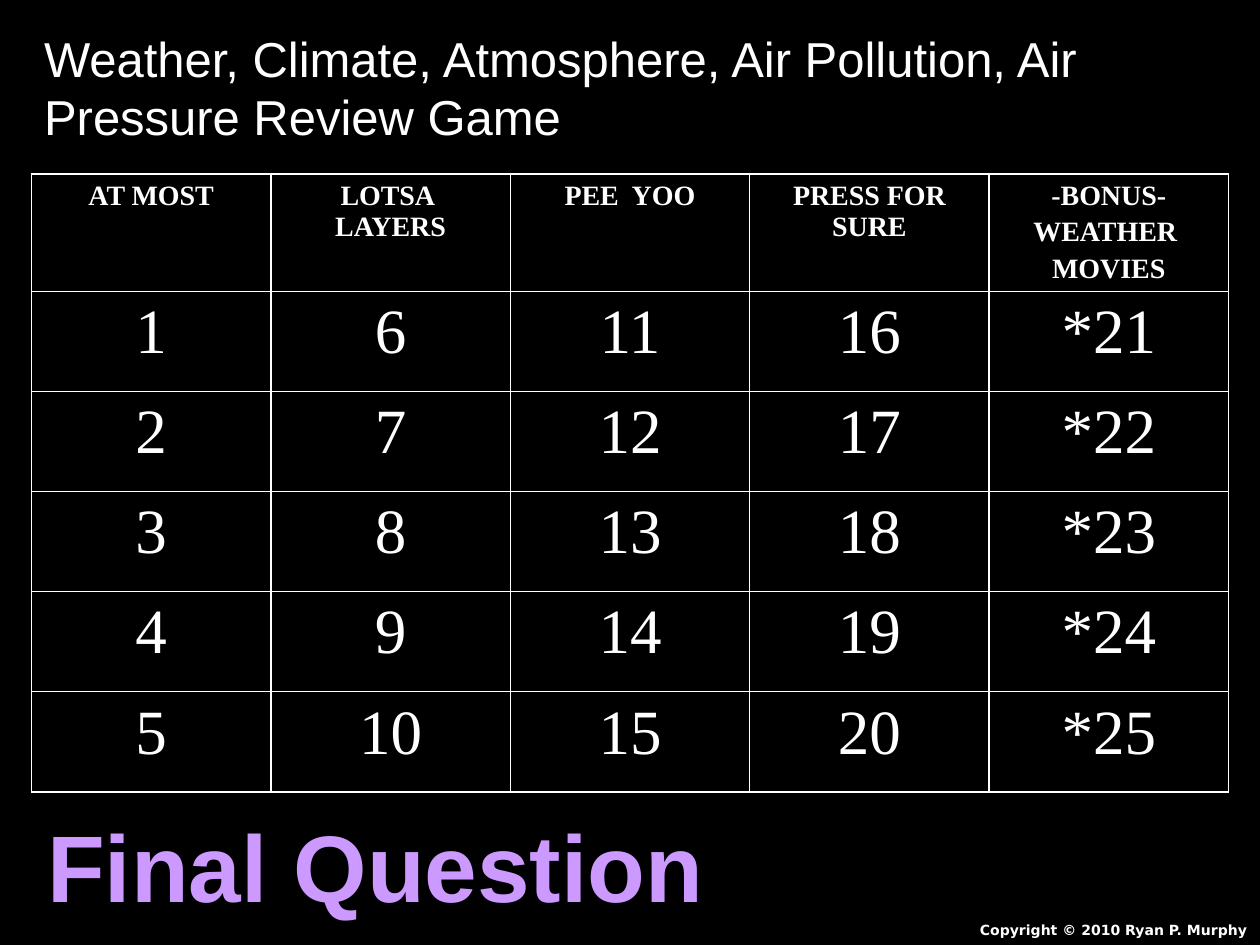
import pptx
import pptx.util
import pptx.dml.color
import pptx.enum.text
import pptx.oxml
import pptx.oxml.ns
from dataclasses import dataclass

Pt, Inches = pptx.util.Pt, pptx.util.Inches
ALIGN = pptx.enum.text.PP_ALIGN
ANCHOR = pptx.enum.text.MSO_ANCHOR
AUTO = pptx.enum.text.MSO_AUTO_SIZE


@dataclass(frozen=True)
class Theme:
    width = Inches(10)
    height = Inches(7.5)
    back = "000000"
    ink = "FFFFFF"
    border_width = Pt(1)
    paragraph_gap = Pt(3.2)
    title = dict(name="Arial", size=Pt(28), bold=False, color=ink)
    header = dict(name="Times New Roman", size=Pt(16), bold=True, color=ink)
    number = dict(name="Times New Roman", size=Pt(36), bold=False, color=ink)
    final = dict(name="Arial", size=Pt(54), bold=True, color="CC99FF")
    copyright = dict(name="DejaVu Sans", size=Pt(8), bold=True, color=ink)


THEME = Theme()
CATEGORIES = ["AT MOST", "LOTSA \vLAYERS", "PEE  YOO", "PRESS FOR SURE",
              "-BONUS-\nWEATHER \nMOVIES"]
QUESTIONS = 5
HEADER_SHARE = 0.19


def rgb(value):
    return pptx.dml.color.RGBColor.from_string(value)


def scale(x, y, w, h):
    return [round(share * side) for share, side in
            zip((x, y, w, h), (THEME.width, THEME.height) * 2)]


def write(tf, text, style, align):
    tf.text = text
    for i, p in enumerate(tf.paragraphs):
        p.alignment = align
        if i:
            p.space_before = THEME.paragraph_gap
        for r in p.runs:
            for key, value in style.items():
                if key == "color":
                    r.font.color.rgb = rgb(value)
                else:
                    setattr(r.font, key, value)


def fill_frame(sp, text, style, align, wrap=True):
    tf = sp.text_frame
    frame = dict(word_wrap=wrap, auto_size=AUTO.NONE, vertical_anchor=ANCHOR.TOP)
    for key, value in frame.items():
        setattr(tf, key, value)
    write(tf, text, style, align)


def add_title(slide, box, text):
    sp = slide.shapes.title
    for key, value in zip(("left", "top", "width", "height"), scale(*box)):
        setattr(sp, key, value)
    fill_frame(sp, text, THEME.title, ALIGN.LEFT)


def add_label(slide, box, text, style, align, wrap=True):
    fill_frame(slide.shapes.add_textbox(*scale(*box)), text, style, align, wrap)


def add_borders(cell):
    tc_pr = cell._tc.get_or_add_tcPr()
    for i, side in enumerate(("lnL", "lnR", "lnT", "lnB")):
        tc_pr.insert(i, pptx.oxml.parse_xml(
            f'<a:{side} {pptx.oxml.ns.nsdecls("a")} w="{THEME.border_width}">'
            f'<a:solidFill><a:srgbClr val="{THEME.ink}"/></a:solidFill></a:{side}>'))


def question_text(column, row):
    mark = "*" if column == len(CATEGORIES) - 1 else ""
    return f"{mark}{column * QUESTIONS + row}"


def add_board(slide, box):
    x, y, w, h = scale(*box)
    table = slide.shapes.add_table(QUESTIONS + 1, len(CATEGORIES), x, y, w, h).table
    header = round(h * HEADER_SHARE)
    for i, row in enumerate(table.rows):
        row.height = (h - header) // QUESTIONS if i else header
        for j, cell in enumerate(row.cells):
            cell.fill.solid()
            cell.fill.fore_color.rgb = rgb(THEME.back)
            add_borders(cell)
            text = question_text(j, i) if i else CATEGORIES[j]
            write(cell.text_frame, text, THEME.number if i else THEME.header,
                  ALIGN.CENTER)


def build_game_slide(prs):
    slide = prs.slides.add_slide(prs.slide_layouts[5])
    slide.background.fill.solid()
    slide.background.fill.fore_color.rgb = rgb(THEME.back)
    add_title(slide, (0.025, 0.023, 0.933, 0.139),
              "Weather, Climate, Atmosphere, Air Pollution, Air Pressure Review Game")
    add_board(slide, (0.025, 0.184, 0.95, 0.654))
    add_label(slide, (0.708, 0.969, 0.292, 0.031), "Copyright © 2010 Ryan P. Murphy",
              THEME.copyright, ALIGN.RIGHT)
    add_label(slide, (0.025, 0.849, 0.546, 0.135), "Final Question",
              THEME.final, ALIGN.CENTER, wrap=False)


def main():
    prs = pptx.Presentation()
    prs.slide_width, prs.slide_height = THEME.width, THEME.height
    build_game_slide(prs)
    prs.save("out.pptx")


if __name__ == "__main__":
    main()
